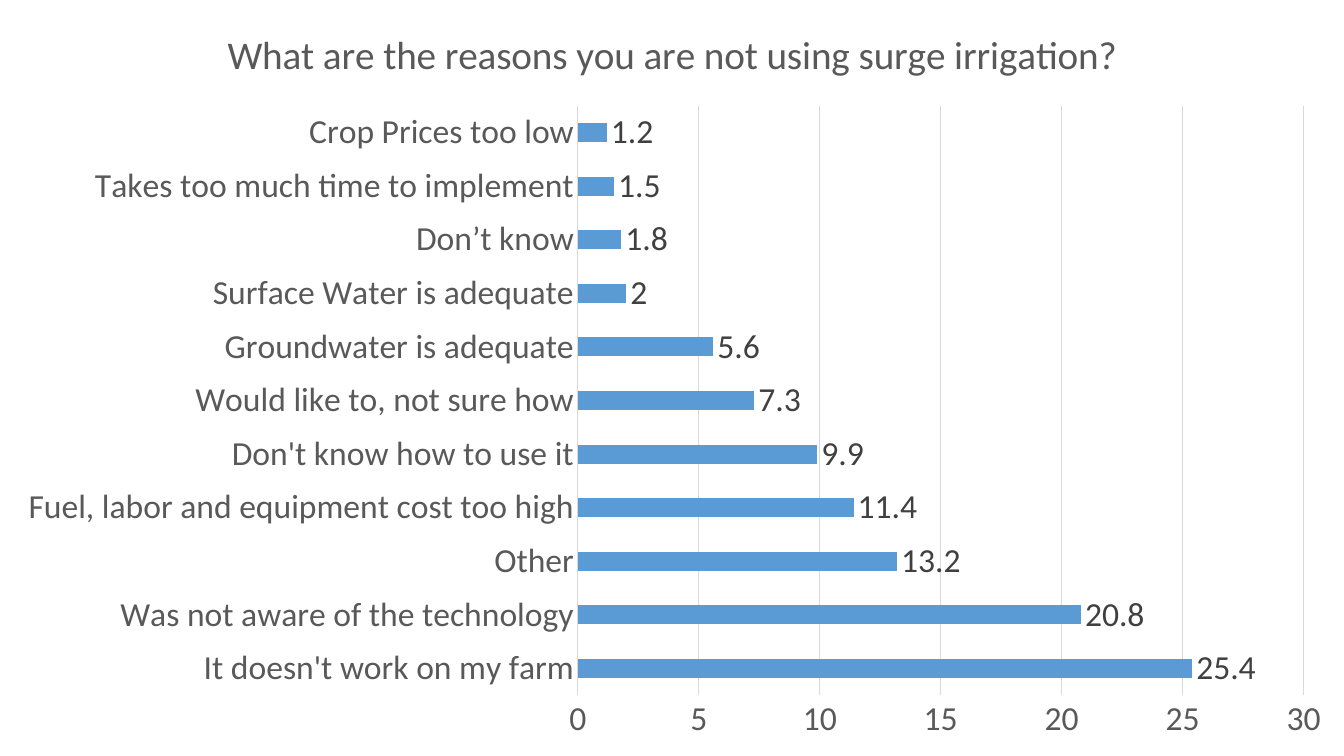
from dataclasses import dataclass

from lxml import etree
from pptx import Presentation
from pptx.chart.data import CategoryChartData
from pptx.dml.color import RGBColor
from pptx.enum.chart import XL_CHART_TYPE as ChartType
from pptx.enum.chart import XL_LABEL_POSITION as LabelPosition
from pptx.enum.chart import XL_TICK_MARK as TickMark
from pptx.oxml.ns import qn
from pptx.util import Cm, Pt


@dataclass(frozen=True)
class Theme:
    font: str = "Calibri"
    text: str = "595959"
    value: str = "404040"
    rule: str = "D9D9D9"
    bar: str = "5B9BD5"
    title_size: int = 28
    body_size: int = 24
    rule_width: float = 0.75


THEME = Theme()
BLANK_LAYOUT = 6
QUESTION = "What are the reasons you are not using surge irrigation?"
REASONS = {
    "It doesn't work on my farm": 25.4,
    "Was not aware of the technology": 20.8,
    "Other": 13.2,
    "Fuel, labor and equipment cost too high": 11.4,
    "Don't know how to use it": 9.9,
    "Would like to, not sure how": 7.3,
    "Groundwater is adequate": 5.6,
    "Surface Water is adequate": 2,
    "Don’t know": 1.8,
    "Takes too much time to implement": 1.5,
    "Crop Prices too low": 1.2,
}
# Bar area as fractions of the chart
PLOT_AREA = {"x": 0.43, "y": 0.14, "w": 0.54, "h": 0.78}


def style_font(font, size, color):
    font.name = THEME.font
    font.size = Pt(size)
    font.bold = False
    font.color.rgb = RGBColor.from_string(color)


def style_rule(line):
    line.color.rgb = RGBColor.from_string(THEME.rule)
    line.width = Pt(THEME.rule_width)


def place_plot(chart):
    plot_area = chart.plots[0]._element.getparent()
    layout = plot_area.find(qn("c:layout"))
    if layout is None:
        layout = etree.Element(qn("c:layout"))
        plot_area.insert(0, layout)
    manual = etree.SubElement(layout, qn("c:manualLayout"))
    settings = {"layoutTarget": "inner", "xMode": "edge", "yMode": "edge"} | PLOT_AREA
    for name, value in settings.items():
        etree.SubElement(manual, qn(f"c:{name}")).set("val", str(value))


def add_title(chart):
    chart.has_title = True
    chart.chart_title.include_in_layout = False
    para = chart.chart_title.text_frame.paragraphs[0]
    span = para.add_run()
    span.text = QUESTION
    style_font(span.font, THEME.title_size, THEME.text)


def style_axes(chart):
    for axis in (chart.category_axis, chart.value_axis):
        axis.major_tick_mark = axis.minor_tick_mark = TickMark.NONE
        style_font(axis.tick_labels.font, THEME.body_size, THEME.text)
    chart.category_axis.has_major_gridlines = False
    style_rule(chart.category_axis.format.line)

    values = chart.value_axis
    values.minimum_scale, values.maximum_scale, values.major_unit = 0, 30, 5
    values.format.line.fill.background()
    values.has_major_gridlines = True
    style_rule(values.major_gridlines.format.line)


def style_bars(plot):
    plot.gap_width = 182
    plot.vary_by_categories = False
    fill = plot.series[0].format.fill
    fill.solid()
    fill.fore_color.rgb = RGBColor.from_string(THEME.bar)

    labels = plot.series[0].data_labels
    labels.show_value = True
    labels.position = LabelPosition.OUTSIDE_END
    style_font(labels.font, THEME.body_size, THEME.value)


def add_reasons_chart(page, left, top, width, height):
    data = CategoryChartData()
    data.categories = list(REASONS)
    data.add_series("Series 1", list(REASONS.values()))
    frame = page.shapes.add_chart(
        ChartType.BAR_CLUSTERED, left, top, width, height, data
    )
    chart = frame.chart
    chart.has_legend = False
    style_font(chart.font, THEME.body_size, THEME.text)
    add_title(chart)
    style_axes(chart)
    style_bars(chart.plots[0])
    place_plot(chart)


def main():
    deck = Presentation()
    deck.slide_width, deck.slide_height = Cm(33.87), Cm(19.05)
    page = deck.slides.add_slide(deck.slide_layouts[BLANK_LAYOUT])
    # The chart fills the page
    add_reasons_chart(page, Cm(0), Cm(0), deck.slide_width, deck.slide_height)
    deck.save("out.pptx")


if __name__ == "__main__":
    main()
